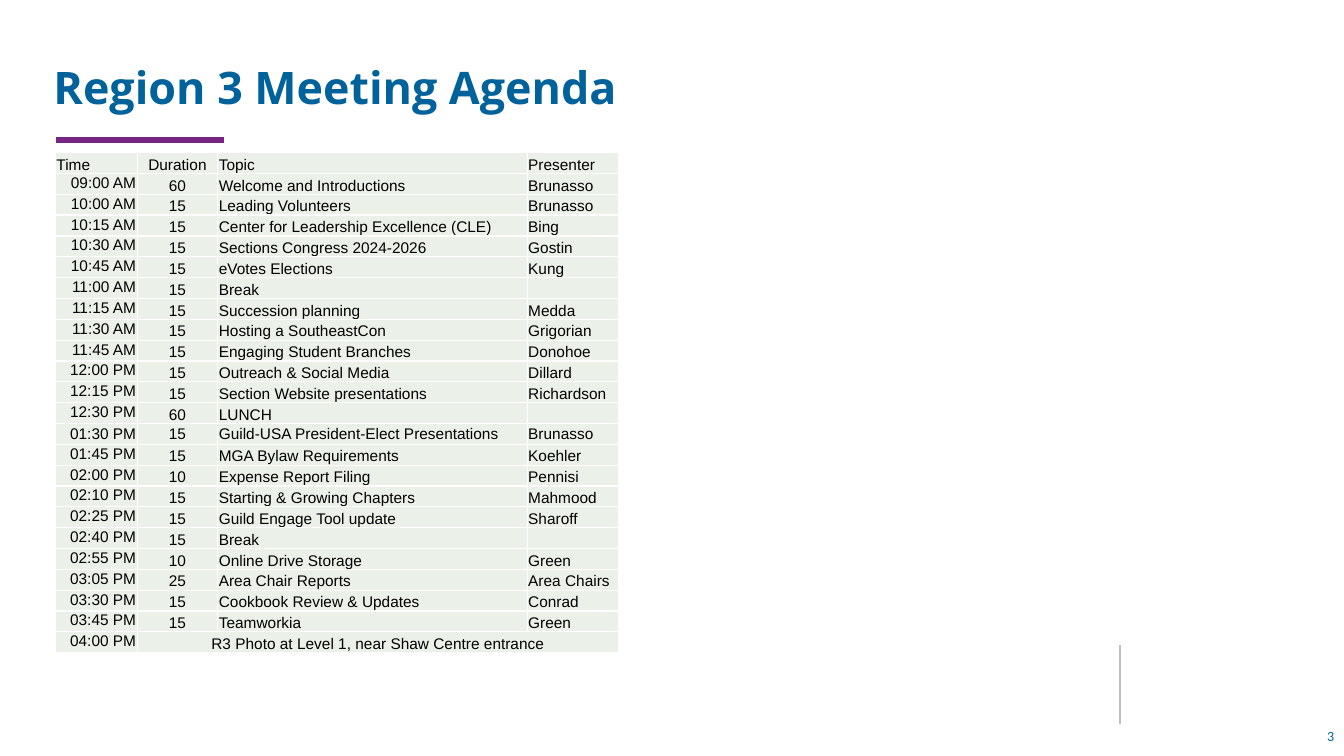
import pptx
import pptx.dml.color
import pptx.enum.shapes
import pptx.enum.text
import pptx.oxml.ns
import pptx.util
from lxml import etree

Pt = pptx.util.Pt
ALIGN = pptx.enum.text.PP_ALIGN
ANCHOR = pptx.enum.text.MSO_ANCHOR
qn = pptx.oxml.ns.qn

BLUE = pptx.dml.color.RGBColor(0x00, 0x62, 0x9B)
PURPLE = pptx.dml.color.RGBColor(0x77, 0x25, 0x83)
GREY = pptx.dml.color.RGBColor(0xBF, 0xBF, 0xBF)
BLACK = pptx.dml.color.RGBColor(0x00, 0x00, 0x00)
WHITE = pptx.dml.color.RGBColor(0xFF, 0xFF, 0xFF)
PALE_GREEN = pptx.dml.color.RGBColor(0xEB, 0xF1, 0xE8)

COLUMN_WIDTHS = [58.4, 57.6, 221, 65.5]
COLUMN_ALIGNS = [ALIGN.RIGHT, ALIGN.CENTER, ALIGN.LEFT, ALIGN.LEFT]
ROW_HEIGHT = 14.91
MIDDLE_TIME = "01:30 PM"
AGENDA = [
    ("Time", "Duration", "Topic", "Presenter"),
    ("09:00 AM", "60", "Welcome and Introductions", "Brunasso"),
    ("10:00 AM", "15", "Leading Volunteers", "Brunasso"),
    ("10:15 AM", "15", "Center for Leadership Excellence (CLE)", "Bing"),
    ("10:30 AM", "15", "Sections Congress 2024-2026", "Gostin"),
    ("10:45 AM", "15", "eVotes Elections", "Kung"),
    ("11:00 AM", "15", "Break", ""),
    ("11:15 AM", "15", "Succession planning", "Medda"),
    ("11:30 AM", "15", "Hosting a SoutheastCon", "Grigorian"),
    ("11:45 AM", "15", "Engaging Student Branches", "Donohoe"),
    ("12:00 PM", "15", "Outreach & Social Media", "Dillard"),
    ("12:15 PM", "15", "Section Website presentations", "Richardson"),
    ("12:30 PM", "60", "LUNCH", ""),
    ("01:30 PM", "15", "Guild-USA President-Elect Presentations", "Brunasso"),
    ("01:45 PM", "15", "MGA Bylaw Requirements", "Koehler"),
    ("02:00 PM", "10", "Expense Report Filing", "Pennisi"),
    ("02:10 PM", "15", "Starting & Growing Chapters", "Mahmood"),
    ("02:25 PM", "15", "Guild Engage Tool update", "Sharoff"),
    ("02:40 PM", "15", "Break", ""),
    ("02:55 PM", "10", "Online Drive Storage", "Green"),
    ("03:05 PM", "25", "Area Chair Reports", "Area Chairs"),
    ("03:30 PM", "15", "Cookbook Review & Updates", "Conrad"),
    ("03:45 PM", "15", "Teamworkia", "Green"),
    ("04:00 PM", "R3 Photo at Level 1, near Shaw Centre entrance", "", ""),
]


class AgendaSlide:
    """Holds the style and the current slide, and draws each kind of element."""

    title_font = "Open Sans"
    table_font = "Arial"
    number_font = "Calibri"

    def __init__(self, presentation):
        self.slide = presentation.slides.add_slide(presentation.slide_layouts[5])

    def add_text(self, paragraph, text, font, size, color, align, bold=False):
        paragraph.alignment = align
        run = paragraph.add_run()
        run.text = text
        run.font.name = font
        run.font.size = Pt(size)
        run.font.bold = bold
        run.font.color.rgb = color

    def title(self, text, left, top, width, height):
        shape = self.slide.shapes.title
        shape.left, shape.top = Pt(left), Pt(top)
        shape.width, shape.height = Pt(width), Pt(height)
        frame = shape.text_frame
        frame.word_wrap = True
        frame.auto_size = pptx.enum.text.MSO_AUTO_SIZE.NONE
        frame.vertical_anchor = ANCHOR.BOTTOM
        paragraph = frame.paragraphs[0]
        paragraph.line_spacing = 0.9
        self.add_text(paragraph, text, self.title_font, 32, BLUE, ALIGN.LEFT, True)

    def line(self, start_x, start_y, end_x, end_y, color, width):
        connector = self.slide.shapes.add_connector(
            pptx.enum.shapes.MSO_CONNECTOR.STRAIGHT,
            Pt(start_x), Pt(start_y), Pt(end_x), Pt(end_y))
        connector.line.color.rgb = color
        connector.line.width = Pt(width)
        etree.SubElement(connector._element.spPr, qn("a:effectLst"))

    def page_number(self, text, left, top, width, height):
        box = self.slide.shapes.add_textbox(Pt(left), Pt(top), Pt(width), Pt(height))
        frame = box.text_frame
        frame.word_wrap = True
        frame.vertical_anchor = ANCHOR.MIDDLE
        self.add_text(frame.paragraphs[0], text, self.number_font, 10, BLUE, ALIGN.RIGHT)

    def cell(self, cell, text, align, anchor):
        cell.margin_left = cell.margin_right = cell.margin_top = Pt(0.72)
        cell.margin_bottom = 0
        cell.vertical_anchor = anchor
        properties = cell._tc.get_or_add_tcPr()
        for side in ("lnL", "lnR", "lnT", "lnB"):
            border = etree.SubElement(properties, qn(f"a:{side}"), w=str(Pt(1)))
            fill = etree.SubElement(border, qn("a:solidFill"))
            etree.SubElement(fill, qn("a:srgbClr"), val=str(WHITE))
        cell.fill.solid()
        cell.fill.fore_color.rgb = PALE_GREEN
        paragraph = cell.text_frame.paragraphs[0]
        if text:
            self.add_text(paragraph, text, self.table_font, 11, BLACK, align)
        else:
            etree.SubElement(paragraph._p, qn("a:endParaRPr"), sz="1100")

    def table(self, rows, left, top):
        table = self.slide.shapes.add_table(
            len(rows), len(COLUMN_WIDTHS), Pt(left), Pt(top),
            Pt(sum(COLUMN_WIDTHS)), Pt(ROW_HEIGHT * len(rows))).table
        table.first_row = table.horz_banding = False
        for column, width in zip(table.columns, COLUMN_WIDTHS):
            column.width = Pt(width)
        for row_index, values in enumerate(rows):
            table.rows[row_index].height = Pt(ROW_HEIGHT)
            for column_index, text in enumerate(values):
                align = COLUMN_ALIGNS[column_index]
                anchor = ANCHOR.BOTTOM
                if values[0] == MIDDLE_TIME:
                    anchor = ANCHOR.MIDDLE
                elif column_index == 0 and row_index == 0:
                    align = ALIGN.LEFT
                elif column_index == 0:
                    anchor = ANCHOR.TOP
                self.cell(table.cell(row_index, column_index), text, align, anchor)
        last = len(rows) - 1
        table.cell(last, 1).merge(table.cell(last, 3))


def main():
    presentation = pptx.Presentation()
    presentation.slide_width, presentation.slide_height = Pt(960), Pt(540)
    agenda = AgendaSlide(presentation)
    agenda.line(800, 461, 800, 517, GREY, 1.5)
    agenda.line(40.3, 100, 160, 100, PURPLE, 4.25)
    agenda.title("Region 3 Meeting Agenda", 31, 15, 863, 70)
    agenda.page_number("3", 744, 511, 216, 29)
    agenda.table(AGENDA, 39.6, 109)
    presentation.save("out.pptx")


if __name__ == "__main__":
    main()
